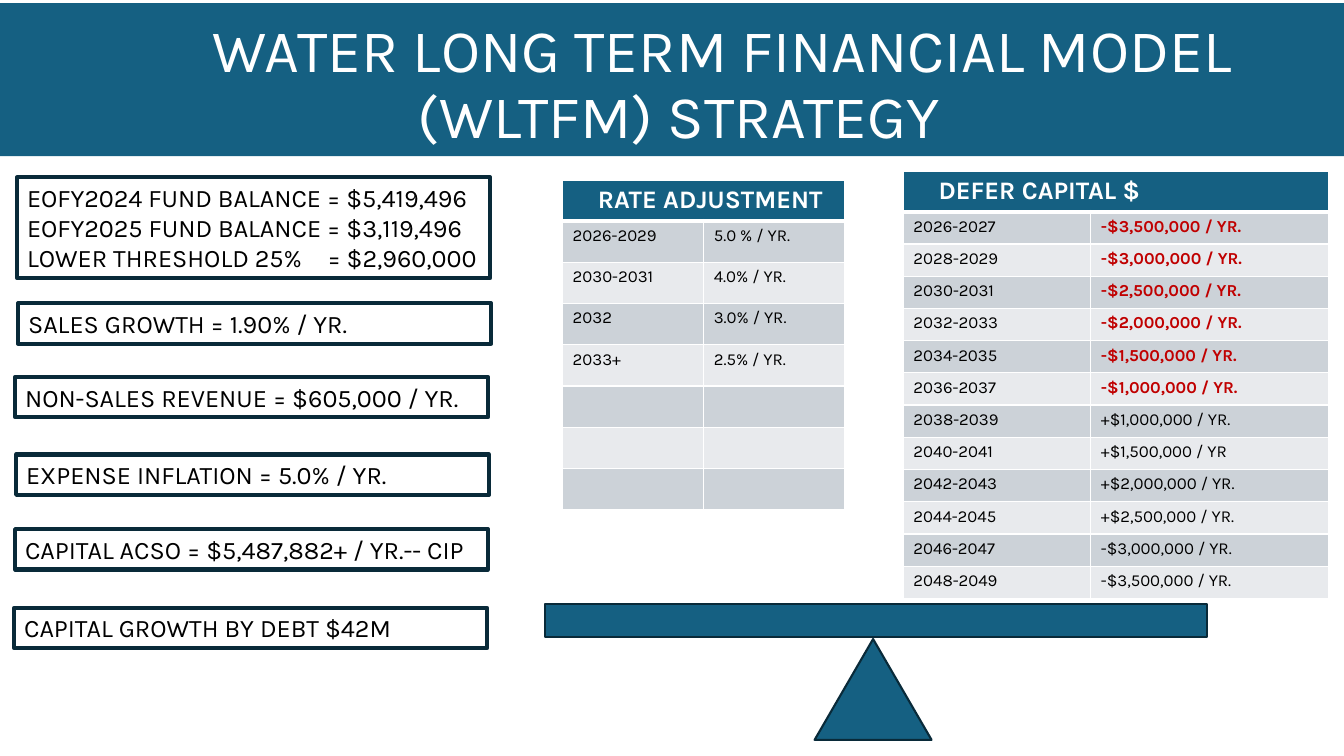
from pptx import Presentation
from pptx.dml.color import RGBColor
from pptx.enum.shapes import MSO_SHAPE as Shape
from pptx.enum.text import MSO_ANCHOR as Anchor, MSO_AUTO_SIZE as AutoSize, PP_ALIGN as Align
from pptx.oxml import parse_xml
from pptx.oxml.ns import nsdecls
from pptx.util import Inches, Pt

FONT = "Karla"
BLUE, NAVY, WHITE, BLACK, RED = "156082", "092A39", "FFFFFF", "000000", "C00000"
BANDS = ("CCD2D8", "E8EAED")

# Text, left and top of each assumption box
ASSUMPTIONS = [
    (["EOFY2024 FUND BALANCE = $5,419,496",
      "EOFY2025 FUND BALANCE = $3,119,496",
      "LOWER THRESHOLD 25%\t= $2,960,000"], 0.17, 1.76),
    (["SALES GROWTH = 1.90% / YR."], 0.18, 3.01),
    (["NON-SALES REVENUE = $605,000 / YR."], 0.15, 3.74),
    (["EXPENSE INFLATION = 5.0% / YR."], 0.16, 4.51),
    (["CAPITAL ACSO = $5,487,882+ / YR.-- CIP"], 0.15, 5.25),
    (["CAPITAL GROWTH BY DEBT $42M"], 0.14, 6.03),
]
RATES = [("2026-2029", "5.0 % / YR."), ("2030-2031", "4.0% / YR."),
         ("2032", "3.0% / YR."), ("2033+", "2.5% / YR."),
         ("", ""), ("", ""), ("", "")]
DEFERRALS = [
    ("2026-2027", "-$3,500,000 / YR."), ("2028-2029", "-$3,000,000 / YR."),
    ("2030-2031", "-$2,500,000 / YR."), ("2032-2033", "-$2,000,000 / YR."),
    ("2034-2035", "-$1,500,000 / YR."), ("2036-2037", "-$1,000,000 / YR."),
    ("2038-2039", "+$1,000,000 / YR."), ("2040-2041", "+$1,500,000 / YR"),
    ("2042-2043", "+$2,000,000 / YR."), ("2044-2045", "+$2,500,000 / YR."),
    ("2046-2047", "-$3,000,000 / YR."), ("2048-2049", "-$3,500,000 / YR."),
]
RED_ROWS = 6


def rgb(color):
    return RGBColor.from_string(color)


def set_font(p, size, color, bold=False):
    p.font.name, p.font.size, p.font.bold = FONT, Pt(size), bold
    p.font.color.rgb = rgb(color)


def add_filled(s, kind, left, top, width, height, outline=True):
    sp = s.shapes.add_shape(kind, Inches(left), Inches(top), Inches(width), Inches(height))
    sp.shadow.inherit = False
    sp.fill.solid()
    sp.fill.fore_color.rgb = rgb(BLUE)
    if outline:
        sp.line.color.rgb = rgb(NAVY)
        sp.line.width = Pt(1.5)
    else:
        sp.line.fill.background()
    return sp


def add_title(s):
    tf = add_filled(s, Shape.RECTANGLE, 0, 0.03, 13.33, 1.52, outline=False).text_frame
    tf.word_wrap = True
    tf.vertical_anchor = Anchor.BOTTOM
    lines = [("WATER LONG TERM FINANCIAL MODEL", 1), ("(WLTFM) STRATEGY", 0.14)]
    tf.text = "\n".join(text for text, _ in lines)
    for p, (_, indent) in zip(tf.paragraphs, lines):
        p.alignment = Align.CENTER
        p.line_spacing = 0.9
        set_font(p, 43.2, WHITE)
        p._p.get_or_add_pPr().set("marL", str(Inches(indent)))


def add_assumption(s, lines, left, top):
    height = 0.1 + 0.3 * len(lines)
    sp = s.shapes.add_textbox(Inches(left), Inches(top), Inches(4.69), Inches(height))
    sp.line.color.rgb = rgb(NAVY)
    sp.line.width = Pt(3)
    tf = sp.text_frame
    tf.word_wrap = True
    tf.auto_size = AutoSize.SHAPE_TO_FIT_TEXT
    tf.text = "\n".join(lines)
    for p in tf.paragraphs:
        set_font(p, 18, BLACK)
        if "\t" in p.text:  # lines up the amount
            p._p.get_or_add_pPr().insert(0, parse_xml(
                f'<a:tabLst {nsdecls("a")}><a:tab pos="{Inches(2.98)}" algn="l"/></a:tabLst>'))


def style_cell(cell, text, fill, size, color, bold, bottom=1):
    # Borders come before the fill in the cell properties
    tc_pr = cell._tc.get_or_add_tcPr()
    for side, width in (("L", 1), ("R", 1), ("T", 1), ("B", bottom)):
        tc_pr.append(parse_xml(
            f'<a:ln{side} {nsdecls("a")} w="{Pt(width)}"><a:solidFill>'
            f'<a:srgbClr val="{WHITE}"/></a:solidFill></a:ln{side}>'))
    cell.fill.solid()
    cell.fill.fore_color.rgb = rgb(fill)
    cell.text = text
    set_font(cell.text_frame.paragraphs[0], size, color, bold)


def add_schedule(s, header, rows, left, top, widths, header_height, row_height, red_rows=0):
    height = header_height + row_height * len(rows)
    table = s.shapes.add_table(len(rows) + 1, 2, Inches(left), Inches(top),
                               Inches(sum(widths)), Inches(height)).table
    for column, width in zip(table.columns, widths):
        column.width = Inches(width)
    for row in table.rows:
        row.height = Inches(row_height)
    table.rows[0].height = Inches(header_height)

    # Header across both columns
    table.cell(0, 0).merge(table.cell(0, 1))
    for col, text in enumerate((header, "")):
        style_cell(table.cell(0, col), text, BLUE, 18, WHITE, True, bottom=3)
    table.cell(0, 0).margin_left = Inches(0.35)

    # Banded body
    for i, values in enumerate(rows):
        for col, text in enumerate(values):
            red = col == 1 and i < red_rows
            style_cell(table.cell(i + 1, col), text, BANDS[i % 2], 12,
                       RED if red else BLACK, red)


def main():
    prs = Presentation()
    prs.slide_width, prs.slide_height = Inches(13.33), Inches(7.5)
    s = prs.slides.add_slide(prs.slide_layouts[6])

    add_title(s)
    for lines, left, top in ASSUMPTIONS:
        add_assumption(s, lines, left, top)

    # Balance beam and its pivot
    add_filled(s, Shape.RECTANGLE, 5.41, 5.99, 6.56, 0.33)
    add_filled(s, Shape.ISOSCELES_TRIANGLE, 8.08, 6.34, 1.16, 1)

    # Schedules resting on the beam
    add_schedule(s, "RATE ADJUSTMENT", RATES, 5.58, 1.79, (1.4, 1.4), 0.4, 0.41)
    add_schedule(s, "DEFER CAPITAL $", DEFERRALS, 8.96, 1.7, (1.86, 2.36), 0.39, 0.32, RED_ROWS)

    prs.save("out.pptx")


if __name__ == "__main__":
    main()
